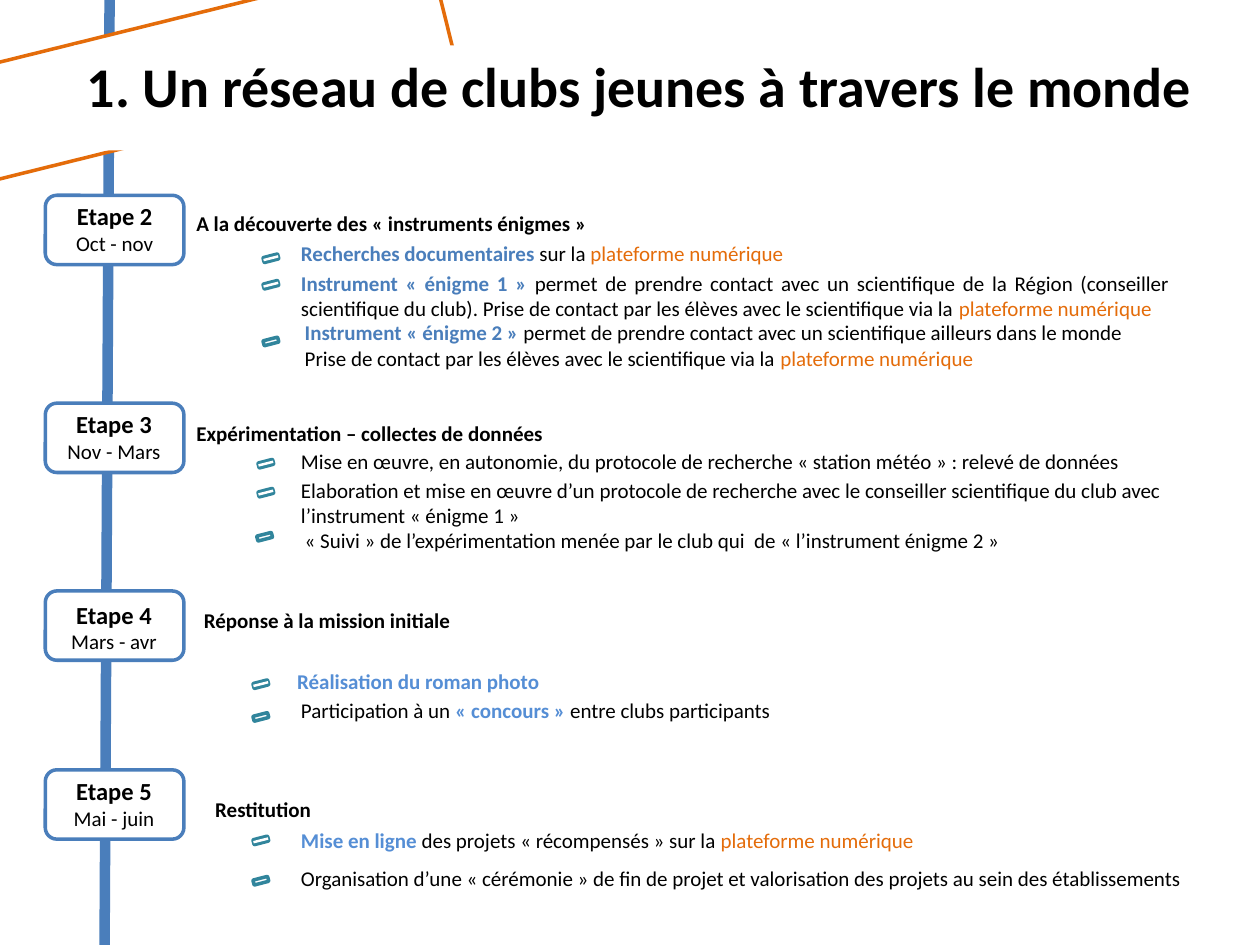
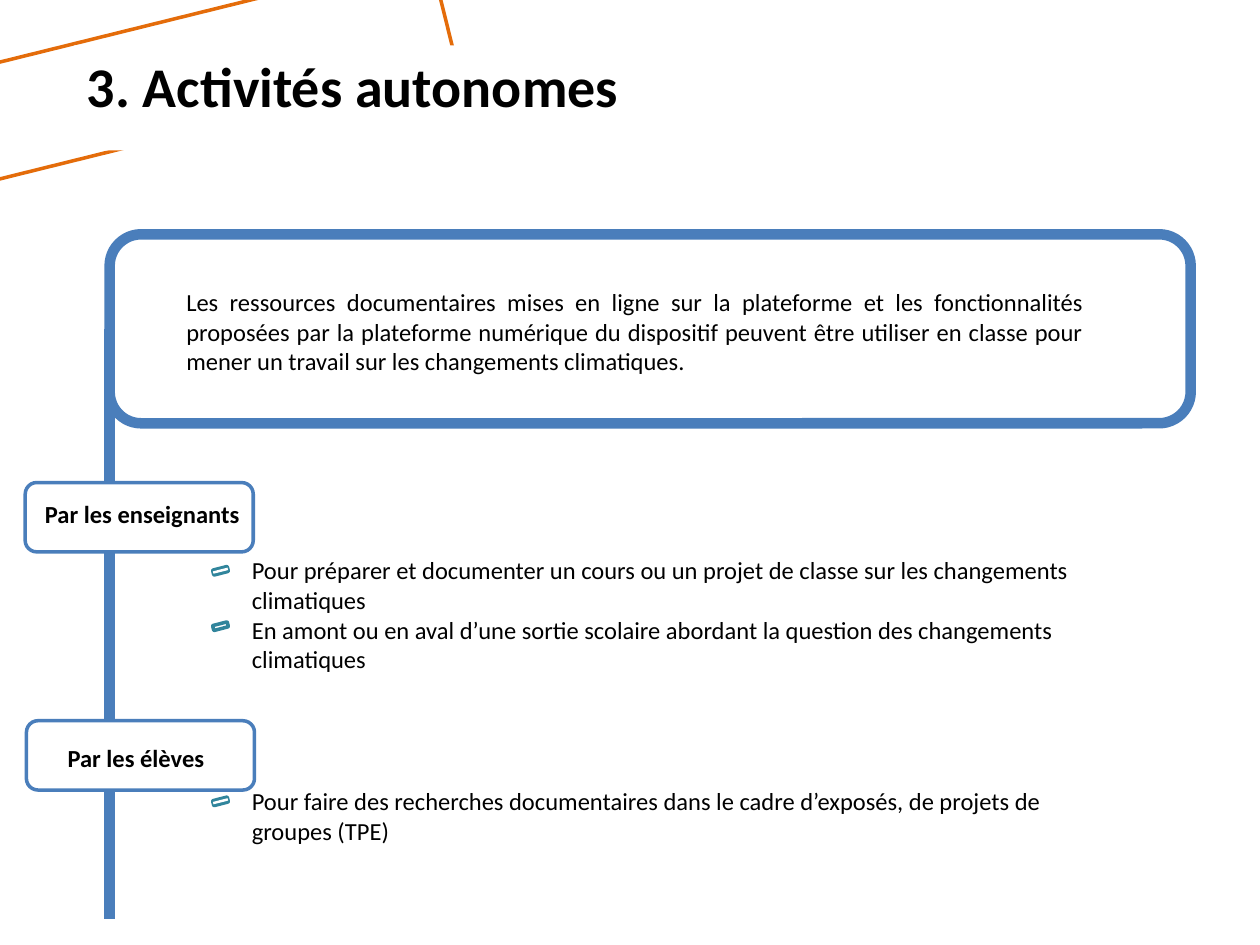
from dataclasses import dataclass
from typing import NamedTuple

from lxml.etree import SubElement
from pptx import Presentation
from pptx.dml.color import RGBColor
from pptx.enum.shapes import MSO_CONNECTOR, MSO_SHAPE
from pptx.enum.text import MSO_ANCHOR, MSO_AUTO_SIZE, PP_ALIGN
from pptx.oxml.ns import qn
from pptx.util import Pt

# Scale: 100 px to the inch
PX = 9144
WIDE, HIGH = 1000, 750

FONT = "Calibri"
BLACK = RGBColor(0x00, 0x00, 0x00)
WHITE = RGBColor(0xFF, 0xFF, 0xFF)
BLUE = RGBColor(0x4A, 0x7E, 0xBB)
SKY = RGBColor(0x55, 0x8E, 0xD5)
TEAL = RGBColor(0x31, 0x85, 0x9C)
ORANGE = RGBColor(0xE4, 0x6C, 0x0A)


class Run(NamedTuple):
    text: str
    color: RGBColor = BLACK
    bold: bool = False
    size: int = 0


class Box(NamedTuple):
    left: int
    top: int
    width: int
    height: int


Para = list[Run]


@dataclass
class Label:
    """Rounded tag on the timeline, with its own text area."""
    tag: Box
    area: Box
    name: str
    dates: str = ""


@dataclass
class Head:
    box: Box
    text: str


@dataclass
class Item:
    """List entry with a tilted mark; an open mark has a white core."""
    box: Box
    mark: tuple[int, int]
    paras: list[Para]
    open: bool = True
    align: PP_ALIGN = PP_ALIGN.LEFT


def emu(box: Box) -> list[int]:
    return [side * PX for side in box]


def write(frame, paras: list[Para], size: int = 12, align=PP_ALIGN.LEFT,
          wrap: bool = True) -> None:
    frame.word_wrap = wrap
    frame.auto_size = MSO_AUTO_SIZE.SHAPE_TO_FIT_TEXT
    for place, runs in enumerate(paras):
        para = frame.add_paragraph() if place else frame.paragraphs[0]
        para.alignment = align
        for part in runs:
            run = para.add_run()
            run.text = part.text
            run.font.name = FONT
            run.font.size = Pt(part.size or size)
            run.font.bold = part.bold
            run.font.color.rgb = part.color


def add_text(slide, box: Box, paras: list[Para], **form) -> None:
    write(slide.shapes.add_textbox(*emu(box)).text_frame, paras, **form)


def add_block(slide, box: Box, kind=MSO_SHAPE.ROUNDED_RECTANGLE, fill=WHITE,
              line=None, weight: int = 2, turn: float = 0):
    block = slide.shapes.add_shape(kind, *emu(box))
    block.shadow.inherit = False
    block.rotation = turn
    if fill is None:
        block.fill.background()
    else:
        block.fill.solid()
        block.fill.fore_color.rgb = fill
    if line is None:
        block.line.fill.background()
    else:
        block.line.color.rgb = line
        block.line.width = Pt(weight)
    return block


def add_spine(slide, start: tuple[int, int], end: tuple[int, int]):
    spine = slide.shapes.add_connector(
        MSO_CONNECTOR.STRAIGHT, *(side * PX for side in start + end))
    spine.line.color.rgb = BLUE
    spine.line.width = Pt(6)
    SubElement(spine.element.spPr, qn("a:effectLst"))
    return spine


def add_title(slide, text: str, width: int) -> None:
    # Tilted orange band, then the title in front of it
    add_block(slide, Box(-54, 13, 412, 90), line=ORANGE, turn=346.1)
    title = slide.shapes.title
    title.left, title.top, title.width, title.height = emu(
        Box(59, 36, width, 64))
    title.fill.solid()
    title.fill.fore_color.rgb = WHITE
    write(title.text_frame, [[Run(text, bold=True)]], size=32, wrap=False)
    title.text_frame.vertical_anchor = MSO_ANCHOR.TOP
    title.element.getparent().append(title.element)


def add_label(slide, label: Label) -> None:
    add_block(slide, label.tag, line=BLUE)
    paras = [[Run(label.name, bold=True)]]
    if label.dates:
        paras.append([Run(label.dates, size=12)])
    add_text(slide, label.area, paras, size=14, align=PP_ALIGN.CENTER,
             wrap=False)


def add_item(slide, item: Item, size: int) -> None:
    left, top = item.mark
    add_block(slide, Box(left, top, 12, 4), line=TEAL, turn=345.7)
    if item.open:
        add_block(slide, Box(left, top + 1, 12, 2), MSO_SHAPE.RECTANGLE,
                  turn=345.7)
    add_text(slide, item.box, item.paras, size=size, align=item.align)


def stage(top: int, left: int, width: int, name: str, dates: str,
          drop: int = 0) -> Label:
    return Label(Box(36, top, 110, 55), Box(left, top + drop, width, 54),
                 name, dates)


LINK = Run("plateforme numérique", ORANGE)

STAGES = [
    stage(155, 50, 82, "Etape 2", "Oct - nov"),
    stage(320, 43, 95, "Etape 3", "Nov - Mars"),
    stage(469, 46, 89, "Etape 4", "Mars - avr", drop=2),
    stage(611, 48, 85, "Etape 5", "Mai - juin"),
]

HEADS = [
    Head(Box(146, 162, 334, 30), "A la découverte des « instruments énigmes »"),
    Head(Box(146, 329, 299, 30), "Expérimentation – collectes de données"),
    Head(Box(152, 477, 222, 30), "Réponse à la mission initiale"),
    Head(Box(161, 627, 101, 30), "Restitution"),
]

STEPS = [
    # Etape 2
    Item(Box(229, 186, 709, 30), (209, 203), [[
        Run("Recherches documentaires ", BLUE, True), Run("sur la "), LINK]]),
    Item(Box(229, 210, 709, 50), (209, 224), [[
        Run("Instrument « énigme 1 » ", BLUE, True),
        Run("permet de prendre contact avec un scientifique de la Région "
            "(conseiller scientifique du club). Prise de contact par les "
            "élèves avec le scientifique via la "), LINK]],
        align=PP_ALIGN.JUSTIFY),
    Item(Box(232, 249, 709, 50), (209, 269), [
        [Run("Instrument « énigme 2 » ", BLUE, True),
         Run("permet de prendre contact avec un scientifique ailleurs dans "
             "le monde")],
        [Run("Prise de contact par les élèves avec le scientifique via la "),
         LINK]], open=False, align=PP_ALIGN.JUSTIFY),
    # Etape 3
    Item(Box(229, 351, 709, 30), (205, 366), [[
        Run("Mise en œuvre, en autonomie, du protocole de recherche "
            "« station météo » : relevé de données")]]),
    Item(Box(229, 374, 709, 50), (205, 389), [[
        Run("Elaboration et mise en œuvre d’un protocole de recherche avec le "
            "conseiller scientifique du club avec l’instrument "
            "« énigme 1 »")]]),
    Item(Box(232, 414, 709, 30), (204, 424), [[
        Run("« Suivi » de l’expérimentation menée par le club qui  de "
            "« l’instrument énigme 2 »")]], open=False),
    # Etape 4
    Item(Box(226, 526, 709, 30), (201, 541), [[
        Run("Réalisation du roman photo", SKY, True)]]),
    Item(Box(229, 549, 575, 30), (201, 567), [[
        Run("Participation à un "), Run("« concours » ", SKY, True),
        Run("entre clubs participants")]], open=False),
    # Etape 5
    Item(Box(229, 652, 709, 30), (201, 665), [[
        Run("Mise en ligne ", SKY, True),
        Run("des projets « récompensés » sur la "), LINK]]),
    Item(Box(229, 682, 780, 30), (201, 697), [[
        Run("Organisation d’une « cérémonie » de fin de projet et "
            "valorisation des projets au sein des établissements")]],
        open=False),
]

GROUPS = [
    Label(Box(20, 383, 181, 55), Box(25, 391, 176, 34), "Par les enseignants"),
    Label(Box(21, 572, 181, 55), Box(43, 585, 130, 34), "Par les élèves"),
]

USES = [
    Item(Box(190, 436, 709, 57), (169, 451), [[
        Run("Pour préparer et documenter un cours ou un projet de classe sur "
            "les changements climatiques")]]),
    Item(Box(190, 483, 709, 57), (169, 495), [[
        Run("En amont ou en aval d’une sortie scolaire abordant la question "
            "des changements climatiques")]], open=False),
    Item(Box(190, 619, 709, 57), (169, 634), [[
        Run("Pour faire des recherches documentaires dans le cadre d’exposés, "
            "de projets de groupes (TPE)")]]),
]

INTRO = ("Les ressources documentaires mises en ligne sur la plateforme et "
         "les fonctionnalités proposées par la plateforme numérique du "
         "dispositif peuvent être utiliser en classe pour mener un travail "
         "sur les changements climatiques.")


def draw_club(slide) -> None:
    add_spine(slide, (87, 0), (83, HIGH))
    add_title(slide, "1. Un réseau de clubs jeunes à travers le monde", 905)
    for label in STAGES:
        add_label(slide, label)
    for head in HEADS:
        add_text(slide, head.box, [[Run(head.text, bold=True)]], wrap=False)
    for item in STEPS:
        add_item(slide, item, 12)


def draw_solo(slide) -> None:
    add_title(slide, "3. Activités autonomes", 446)
    # Framed intro, with the timeline hanging from its left side
    frame = add_block(slide, Box(87, 186, 858, 150), fill=None, line=BLUE,
                      weight=6)
    spine = add_spine(slide, (87, 261), (87, 729))
    spine.begin_connect(frame, 1)
    add_text(slide, Box(138, 223, 732, 81), [[Run(INTRO)]], size=14,
             align=PP_ALIGN.JUSTIFY)
    for item in USES:
        add_item(slide, item, 14)
    for label in GROUPS:
        add_label(slide, label)


def main() -> None:
    deck = Presentation()
    deck.slide_width, deck.slide_height = WIDE * PX, HIGH * PX
    for draw in (draw_club, draw_solo):
        draw(deck.slides.add_slide(deck.slide_layouts[5]))
    deck.save("out.pptx")


if __name__ == "__main__":
    main()
